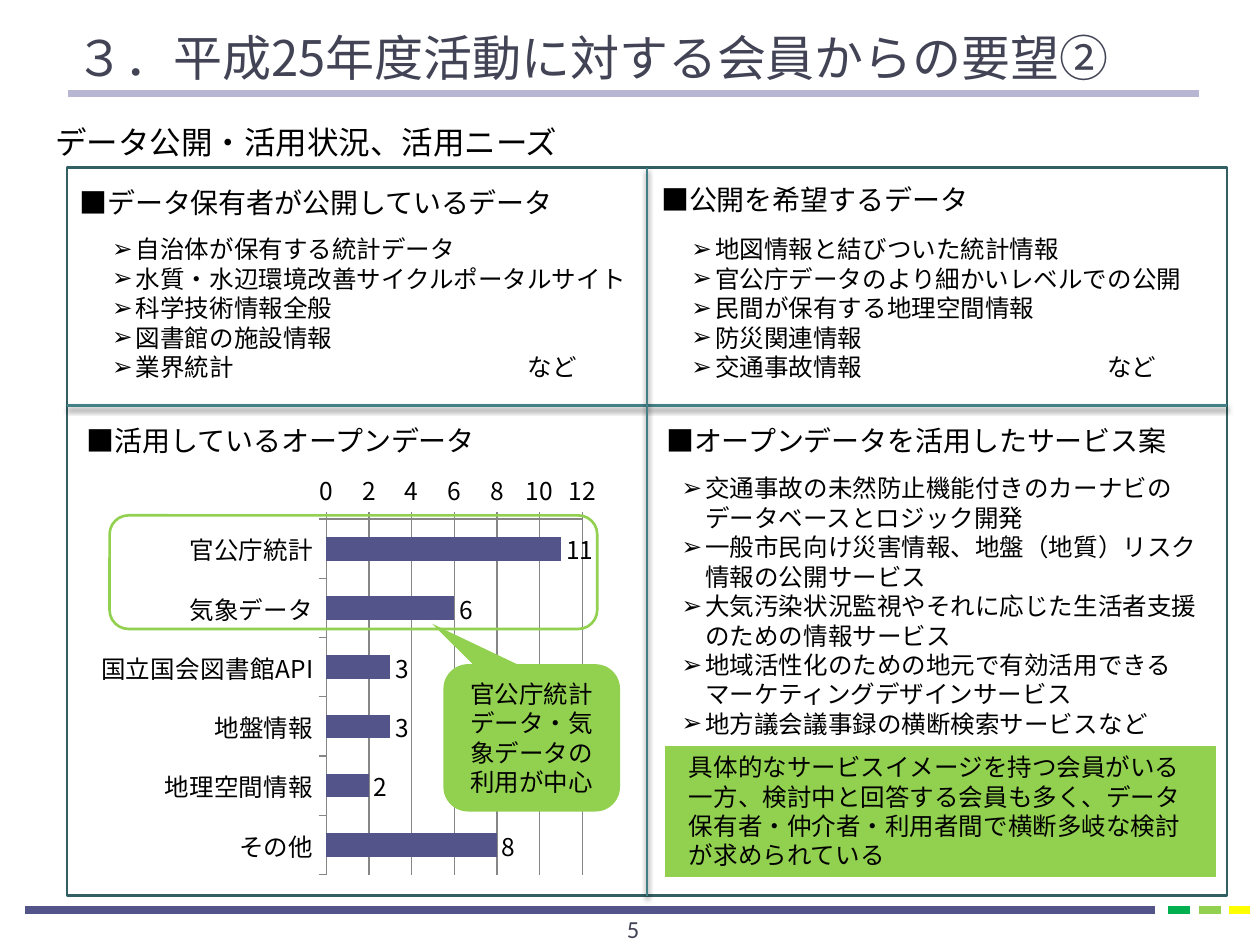
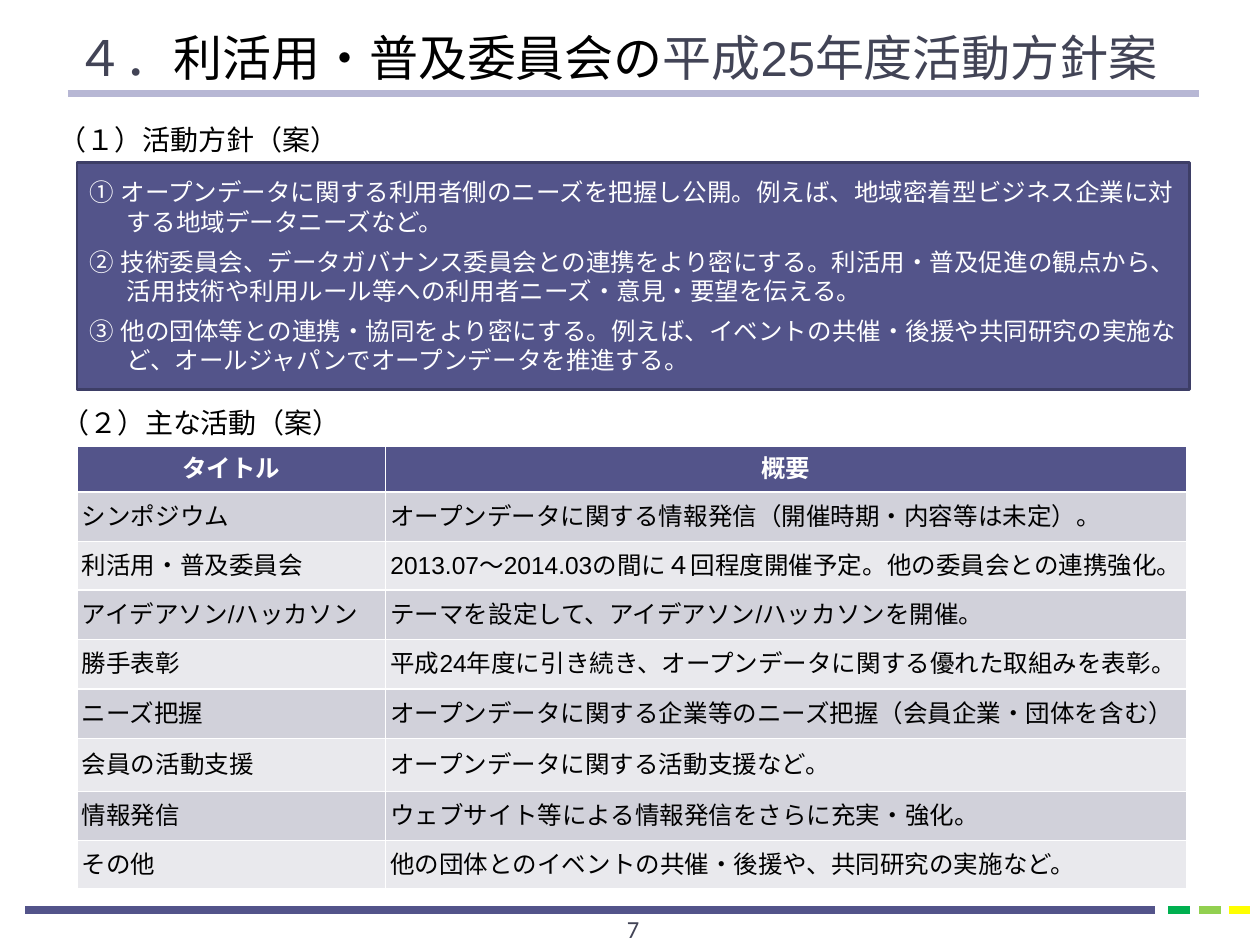
from lxml import etree
from pptx import Presentation
from pptx.chart.data import CategoryChartData
from pptx.dml.color import RGBColor
from pptx.enum.chart import XL_CHART_TYPE, XL_LABEL_POSITION, XL_TICK_MARK
from pptx.enum.shapes import MSO_CONNECTOR, MSO_SHAPE
from pptx.enum.text import MSO_ANCHOR, MSO_AUTO_SIZE, PP_ALIGN
from pptx.oxml import parse_xml
from pptx.oxml.ns import nsdecls, qn
from pptx.util import Cm, Pt

INDIGO = RGBColor(0x53, 0x54, 0x8A)
DARK_INDIGO = RGBColor(0x3D, 0x3E, 0x66)
LAVENDER = RGBColor(0xB7, 0xB7, 0xD4)
SLATE = RGBColor(0x42, 0x44, 0x56)
GREEN = RGBColor(0x00, 0xB0, 0x50)
LIME = RGBColor(0x92, 0xD0, 0x50)
YELLOW = RGBColor(0xFF, 0xFF, 0x00)
TEAL = RGBColor(0x43, 0x80, 0x86)
DARK_TEAL = RGBColor(0x32, 0x5F, 0x63)
GRID_GRAY = RGBColor(0x86, 0x86, 0x86)
ROW_DARK = RGBColor(0xD1, 0xD1, 0xDA)
ROW_LIGHT = RGBColor(0xE9, 0xE9, 0xED)
BLACK = RGBColor(0, 0, 0)
WHITE = RGBColor(0xFF, 0xFF, 0xFF)

NOTO, ARIAL, CALIBRI = "Noto Sans CJK JP", "Arial", "Calibri"
CENTER, LEFT = PP_ALIGN.CENTER, PP_ALIGN.LEFT
MIDDLE, BOTTOM = MSO_ANCHOR.MIDDLE, MSO_ANCHOR.BOTTOM
RECT, ROUND_RECT = MSO_SHAPE.RECTANGLE, MSO_SHAPE.ROUNDED_RECTANGLE
CALLOUT = MSO_SHAPE.ROUNDED_RECTANGULAR_CALLOUT

# Footer dashes: left, right, colour
FOOTER_Y = 18.34
FOOTER = [(0.51, 23.29, INDIGO), (23.55, 23.98, GREEN),
          (24.18, 24.61, LIME), (24.77, 25.2, YELLOW)]

REQUESTS_TITLE = [("３．平成25年度活動に対する会員からの要望②", SLATE)]
REQUESTS_LEAD = "データ公開・活用状況、活用ニーズ"
# Headings: left, top, width, text
HEADINGS = [
    (1.35, 3.61, 10.21, "■データ保有者が公開しているデータ"),
    (13.08, 3.56, 6.78, "■公開を希望するデータ"),
    (1.5, 8.41, 8.48, "■活用しているオープンデータ"),
    (13.18, 8.41, 10.77, "■オープンデータを活用したサービス案"),
]
# Bullet lists: left, top, height, items
BULLET_LISTS = [
    (1.5, 4.6, 3.25, [
        "自治体が保有する統計データ",
        "水質・水辺環境改善サイクルポータルサイト",
        "科学技術情報全般",
        "図書館の施設情報",
        "業界統計\tなど"]),
    (13.18, 4.6, 3.25, [
        "地図情報と結びついた統計情報",
        "官公庁データのより細かいレベルでの公開",
        "民間が保有する地理空間情報",
        "防災関連情報",
        "交通事故情報\tなど"]),
    (12.98, 9.42, 5.64, [
        "交通事故の未然防止機能付きのカーナビのデータベースとロジック開発",
        "一般市民向け災害情報、地盤（地質）リスク情報の公開サービス",
        "大気汚染状況監視やそれに応じた生活者支援のための情報サービス",
        "地域活性化のための地元で有効活用できるマーケティングデザインサービス",
        "地方議会議事録の横断検索サービス\tなど"]),
]
DATA_USE = [("官公庁統計", 11), ("気象データ", 6), ("国立国会図書館API", 3),
            ("地盤情報", 3), ("地理空間情報", 2), ("その他", 8)]
CALLOUT_TEXT = "官公庁統計データ・気象データの利用が中心"
SUMMARY = ("具体的なサービスイメージを持つ会員がいる一方、検討中と回答する会員も多く、"
           "データ保有者・仲介者・利用者間で横断多岐な検討が求められている")

PLAN_TITLE = [("４．", SLATE), ("利活用・普及委員会の", BLACK),
              ("平成25年度活動方針案", SLATE)]
PLAN_HEADINGS = [(0.94, 2.34, 6.22, "（１）活動方針（案）"),
                 (0.99, 8.05, 6.22, "（２）主な活動（案）")]
POLICIES = [
    "① オープンデータに関する利用者側のニーズを把握し公開。例えば、"
    "地域密着型ビジネス企業に対する地域データニーズなど。",
    "② 技術委員会、データガバナンス委員会との連携をより密にする。"
    "利活用・普及促進の観点から、活用技術や利用ルール等への利用者ニーズ・意見・要望を伝える。",
    "③ 他の団体等との連携・協同をより密にする。例えば、イベントの共催・後援や"
    "共同研究の実施など、オールジャパンでオープンデータを推進する。",
]
# Activities: row height, title, outline
ACTIVITIES = [
    (0.93, "タイトル", "概要"),
    (1.0, "シンポジウム", "オープンデータに関する情報発信（開催時期・内容等は未定）。"),
    (0.97, "利活用・普及委員会",
     "2013.07～2014.03の間に４回程度開催予定。他の委員会との連携強化。"),
    (1.0, "アイデアソン/ハッカソン", "テーマを設定して、アイデアソン/ハッカソンを開催。"),
    (1.0, "勝手表彰", "平成24年度に引き続き、オープンデータに関する優れた取組みを表彰。"),
    (1.0, "ニーズ把握", "オープンデータに関する企業等のニーズ把握（会員企業・団体を含む）"),
    (1.07, "会員の活動支援", "オープンデータに関する活動支援など。"),
    (0.98, "情報発信", "ウェブサイト等による情報発信をさらに充実・強化。"),
    (0.98, "その他", "他の団体とのイベントの共催・後援や、共同研究の実施など。"),
]
ACTIVITY_COLS = (6.22, 16.15)


def cm(*values):
    return [Cm(v) for v in values]


def set_east_asian(r_pr, name):
    """Give run properties an East Asian typeface, after the Latin one."""
    ea = etree.Element(qn("a:ea"), typeface=name)
    r_pr.find(qn("a:latin")).addnext(ea)


def style_run(r, size, color, font):
    r.font.size, r.font.name = Pt(size), font
    r.font.color.rgb = color
    set_east_asian(r.font._element if hasattr(r.font, "_element")
                   else r._r.get_or_add_rPr(), font)


def write(tf, texts, size, color=BLACK, font=NOTO, align=LEFT):
    for i, text in enumerate(texts):
        p = tf.paragraphs[0] if i == 0 else tf.add_paragraph()
        r = p.add_run()
        r.text = text
        style_run(r, size, color, font)
        p.alignment = align


def indent(p, left, first=0):
    p_pr = p._p.get_or_add_pPr()
    p_pr.set("marL", str(Cm(left)))
    p_pr.set("indent", str(Cm(first)))
    return p_pr


def add_line(s, x1, y1, x2, y2, color, width, shadow=False):
    line = s.shapes.add_connector(MSO_CONNECTOR.STRAIGHT, *cm(x1, y1, x2, y2))
    line.line.color.rgb, line.line.width = color, Pt(width)
    effects = etree.SubElement(line._element.spPr, qn("a:effectLst"))
    if shadow:
        effects.append(parse_xml(
            f'<a:outerShdw {nsdecls("a")} blurRad="{Pt(3)}" dist="{Pt(2)}" '
            'dir="5400000" rotWithShape="0"><a:srgbClr val="000000">'
            '<a:alpha val="40000"/></a:srgbClr></a:outerShdw>'))
    return line


def add_box(s, kind, box, fill=None, line=None):
    sp = s.shapes.add_shape(kind, *cm(*box))
    sp.shadow.inherit = False
    if fill is None:
        sp.fill.background()
    else:
        sp.fill.solid()
        sp.fill.fore_color.rgb = fill
    if line is None:
        sp.line.fill.background()
    else:
        sp.line.color.rgb, sp.line.width = line, Pt(1.5)
    sp.text_frame.word_wrap = True
    return sp


def add_text(s, box, texts, size, wrap=True, **style):
    tf = s.shapes.add_textbox(*cm(*box)).text_frame
    tf.word_wrap = wrap
    tf.auto_size = MSO_AUTO_SIZE.SHAPE_TO_FIT_TEXT
    write(tf, texts, size, **style)
    return tf


def add_headings(s, headings):
    for left, top, width, text in headings:
        add_text(s, (left, top, width, 0.94), [text], 16, wrap=False)


def add_bullets(s, left, top, height, items):
    tf = add_text(s, (left, top, 11.56, height), items, 14)
    for p in tf.paragraphs:
        p_pr = indent(p, 0.99, -0.48)
        etree.SubElement(p_pr, qn("a:buFont"), typeface=ARIAL)
        etree.SubElement(p_pr, qn("a:buChar"), char="➢")
        if "\t" in p.text:
            tabs = etree.SubElement(p_pr, qn("a:tabLst"))
            etree.SubElement(tabs, qn("a:tab"), pos=str(Cm(9.88)), algn="r")


def new_slide(prs, title_parts, font, number):
    s = prs.slides.add_slide(prs.slide_layouts[5])
    for left, right, color in FOOTER:
        add_line(s, left, FOOTER_Y, right, FOOTER_Y, color, 4.5)
    add_line(s, 1.37, 1.88, 24.18, 1.88, LAVENDER, 4.25)
    title = s.shapes.title
    title.left, title.top, title.width, title.height = cm(1.27, 0.03, 22.86, 1.83)
    tf = title.text_frame
    tf.vertical_anchor, tf.auto_size = BOTTOM, MSO_AUTO_SIZE.NONE
    tf.paragraphs[0].alignment = LEFT
    for text, color in title_parts:
        r = tf.paragraphs[0].add_run()
        r.text = text
        style_run(r, 28, color, font)
    add_text(s, (10.01, 18.31, 5.51, 1.02), [str(number)], 14,
             color=SLATE, font=CALIBRI, align=CENTER)
    return s


def add_usage_chart(s):
    data = CategoryChartData()
    data.categories = [name for name, _ in DATA_USE]
    data.add_series("Series 1", [count for _, count in DATA_USE])
    chart = s.shapes.add_chart(XL_CHART_TYPE.BAR_CLUSTERED,
                               *cm(1.73, 9.37, 10.54, 8.43), data).chart
    chart.has_legend = chart.has_title = False
    chart.font.name, chart.font.size = NOTO, Pt(14)
    chart.font.color.rgb = BLACK
    set_east_asian(chart.element.xpath("c:txPr//a:defRPr")[0], NOTO)

    cats, vals = chart.category_axis, chart.value_axis
    cats.reverse_order = True
    vals.minimum_scale, vals.maximum_scale, vals.major_unit = 0, 12, 2
    vals.has_major_gridlines = True
    vals.major_gridlines.format.line.color.rgb = GRID_GRAY
    for axis in (cats, vals):
        axis.major_tick_mark = XL_TICK_MARK.OUTSIDE
        axis.format.line.color.rgb = GRID_GRAY

    plot = chart.plots[0]
    plot.gap_width, plot.vary_by_categories = 150, False
    plot.has_data_labels = True
    plot.data_labels.show_value = True
    plot.data_labels.position = XL_LABEL_POSITION.OUTSIDE_END
    fill = plot.series[0].format.fill
    fill.solid()
    fill.fore_color.rgb = INDIGO

    area = chart.element.xpath("c:chart/c:plotArea")[0]
    for old in area.findall(qn("c:layout")):
        area.remove(old)
    place = "".join(f'<c:{tag} val="{val}"/>' for tag, val in [
        ("layoutTarget", "inner"), ("xMode", "edge"), ("yMode", "edge"),
        ("x", 0.46), ("y", 0.13), ("w", 0.49), ("h", 0.85)])
    area.insert(0, parse_xml(f'<c:layout {nsdecls("c")}><c:manualLayout>{place}'
                             '</c:manualLayout></c:layout>'))


def build_requests(prs):
    s = new_slide(prs, REQUESTS_TITLE, NOTO, 5)
    add_text(s, (0.86, 2.36, 10.77, 1.02), [REQUESTS_LEAD], 18, wrap=False)
    add_usage_chart(s)
    add_box(s, ROUND_RECT, (2.21, 10.39, 9.83, 2.29), line=LIME)
    callout = add_box(s, CALLOUT, (8.94, 13.39, 3.56, 2.97), fill=LIME)
    for i, value in enumerate((-0.565, -0.775, 0.167)):
        callout.adjustments[i] = value
    callout.text_frame.vertical_anchor = MIDDLE
    write(callout.text_frame, [CALLOUT_TEXT], 14, align=CENTER)

    frame = add_box(s, RECT, (1.35, 3.38, 23.39, 14.68), line=DARK_TEAL)
    add_line(s, 1.35, 8.18, 24.74, 8.18, TEAL, 1.5, shadow=True)
    divider = add_line(s, 13.04, 3.38, 13.04, 18.06, TEAL, 1.5, shadow=True)
    divider.begin_connect(frame, 0)
    divider.end_connect(frame, 2)

    add_headings(s, HEADINGS)
    for bullet_list in BULLET_LISTS:
        add_bullets(s, *bullet_list)
    tf = add_box(s, RECT, (13.41, 15.04, 11.1, 2.64), fill=LIME).text_frame
    tf.vertical_anchor = MSO_ANCHOR.TOP
    write(tf, [SUMMARY], 14)
    indent(tf.paragraphs[0], 0.23)


def add_activity_table(s):
    table = s.shapes.add_table(len(ACTIVITIES), len(ACTIVITY_COLS),
                               *cm(1.55, 8.99, 22.4, 8.92)).table
    for col, width in zip(table.columns, ACTIVITY_COLS):
        col.width = Cm(width)
    for i, (height, *texts) in enumerate(ACTIVITIES):
        table.rows[i].height = Cm(height)
        header = i == 0
        fill = INDIGO if header else ROW_DARK if i % 2 else ROW_LIGHT
        for cell, text in zip(table.rows[i].cells, texts):
            cell.fill.solid()
            cell.fill.fore_color.rgb = fill
            cell.vertical_anchor = MIDDLE
            cell.margin_left = cell.margin_right = Cm(0.1)
            cell.margin_top = cell.margin_bottom = Cm(0.13)
            write(cell.text_frame, [text], 14, WHITE if header else BLACK,
                  ARIAL, CENTER if header else LEFT)
            cell.text_frame.paragraphs[0].runs[0].font.bold = header


def build_plan(prs):
    s = new_slide(prs, PLAN_TITLE, ARIAL, 7)
    add_activity_table(s)
    tf = add_box(s, RECT, (1.55, 3.28, 22.43, 4.57), INDIGO, DARK_INDIGO).text_frame
    tf.vertical_anchor = MIDDLE
    write(tf, POLICIES, 14, WHITE, ARIAL)
    for p in tf.paragraphs:
        indent(p, 0.76, -0.76)
        p.space_after = Pt(6)
    add_headings(s, PLAN_HEADINGS)


def main():
    prs = Presentation()
    prs.slide_width, prs.slide_height = cm(25.4, 19.05)
    build_requests(prs)
    build_plan(prs)
    prs.save("out.pptx")


if __name__ == "__main__":
    main()
